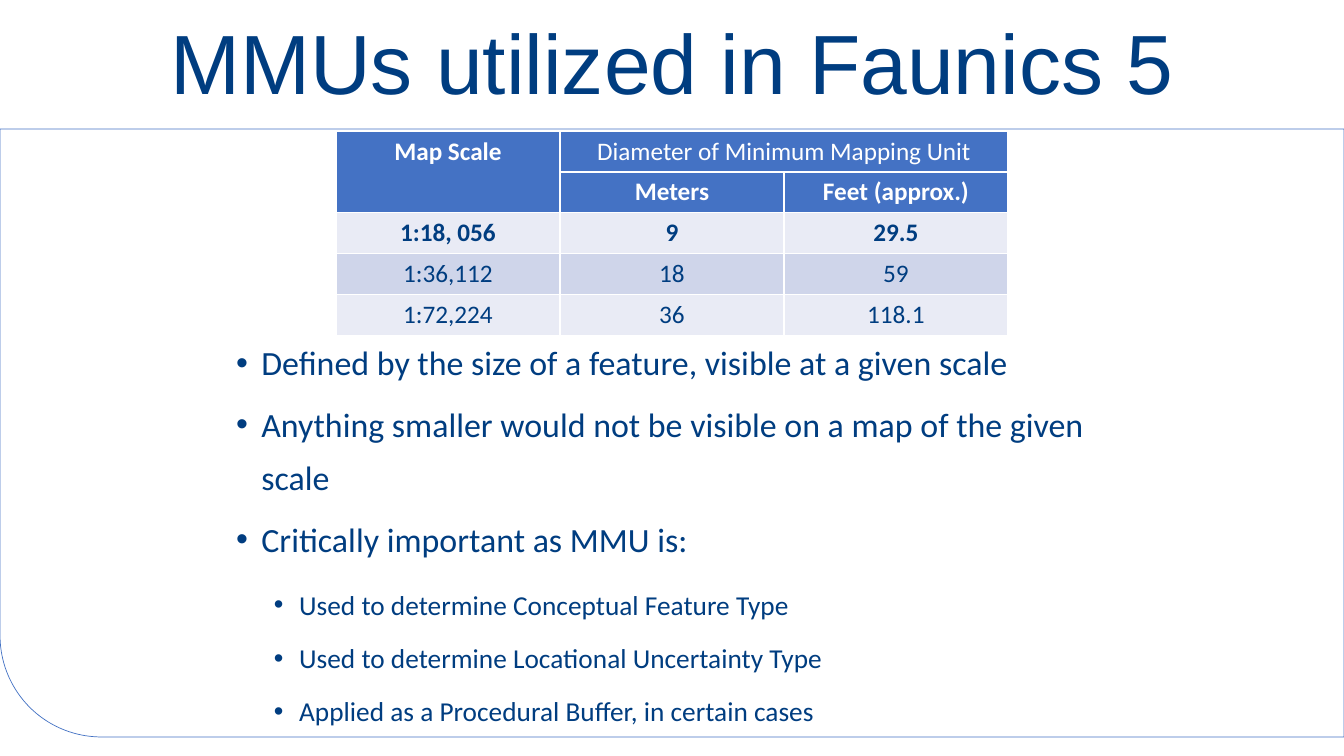
from lxml import etree
from pptx import Presentation
from pptx.dml.color import RGBColor
from pptx.enum.shapes import MSO_SHAPE
from pptx.enum.text import MSO_ANCHOR, MSO_AUTO_SIZE, PP_ALIGN
from pptx.oxml.ns import qn
from pptx.util import Pt

COLORS = {
    "navy": "003D80",
    "blue": "4472C4",
    "white": "FFFFFF",
    "pale": "E9EBF5",
    "band": "CFD5EA",
}
SCALE_ROWS = [
    ["Map Scale", "Diameter of Minimum Mapping Unit", ""],
    ["", "Meters", "Feet (approx.)"],
    ["1:18, 056", "9", "29.5"],
    ["1:36,112", "18", "59"],
    ["1:72,224", "36", "118.1"],
]
ROW_FILLS = ["blue", "blue", "pale", "band", "pale"]
BULLETS = [
    (0, "Defined by the size of a feature, visible at a given scale"),
    (0, "Anything smaller would not be visible on a map of the given scale"),
    (0, "Critically important as MMU is:"),
    (1, "Used to determine Conceptual Feature Type"),
    (1, "Used to determine Locational Uncertainty Type"),
    (1, "Applied as a Procedural Buffer, in certain cases"),
]
BULLET_LEVELS = [
    {"size": 24.2, "indent": 27, "after": 6},
    {"size": 19.5, "indent": 54, "after": 0},
]


def rgb(name):
    return RGBColor.from_string(COLORS[name])


def set_all(target, values):
    for name, value in values.items():
        setattr(target, name, value)


def format_font(font, color, **values):
    set_all(font, values)
    font.color.rgb = rgb(color)


def add_title(page, text):
    title = page.shapes.title
    set_all(title, {"left": 0, "top": Pt(12.2), "width": Pt(960), "height": Pt(72)})
    frame = title.text_frame
    set_all(frame, {"word_wrap": True, "auto_size": MSO_AUTO_SIZE.NONE,
                    "vertical_anchor": MSO_ANCHOR.MIDDLE})
    para = frame.paragraphs[0]
    set_all(para, {"text": text, "alignment": PP_ALIGN.CENTER, "line_spacing": 0.9})
    format_font(para.runs[0].font, "navy", name="Arial", size=Pt(60), bold=False)


def add_content_frame(page):
    panel = page.shapes.add_shape(
        MSO_SHAPE.ROUND_1_RECTANGLE, 0, Pt(92.2), Pt(960), Pt(434.2))
    panel.rotation = 180
    panel.shadow.inherit = False
    panel.fill.solid()
    panel.fill.fore_color.rgb = rgb("white")
    panel.line.color.rgb = rgb("blue")
    panel.line.width = Pt(0.5)


def add_cell_borders(cell, color, width):
    properties = cell._tc.get_or_add_tcPr()
    for side in ("a:lnL", "a:lnR", "a:lnT", "a:lnB"):
        line = etree.SubElement(properties, qn(side), w=str(Pt(width)))
        fill = etree.SubElement(line, qn("a:solidFill"))
        etree.SubElement(fill, qn("a:srgbClr"), val=COLORS[color])


def fill_cell(cell, text, fill, color, bold):
    add_cell_borders(cell, "white", 1)
    cell.fill.solid()
    cell.fill.fore_color.rgb = rgb(fill)
    para = cell.text_frame.paragraphs[0]
    para.alignment = PP_ALIGN.CENTER
    format_font(para.font, color, name="Calibri", size=Pt(18), bold=bold)
    if text:
        span = para.add_run()
        span.text = text
        format_font(span.font, color, name="Calibri", size=Pt(18), bold=bold)


def add_scale_table(page):
    table = page.shapes.add_table(
        len(SCALE_ROWS), 3, Pt(240), Pt(93.6), Pt(480), Pt(146)).table
    for column in table.columns:
        column.width = Pt(160)
    for r, (row, fill) in enumerate(zip(SCALE_ROWS, ROW_FILLS)):
        table.rows[r].height = Pt(29.2)
        for c, text in enumerate(row):
            bold = r in (1, 2) or (r, c) == (0, 0)
            color = "white" if fill == "blue" else "navy"
            fill_cell(table.cell(r, c), text, fill, color, bold)
    table.cell(0, 0).merge(table.cell(1, 0))
    table.cell(0, 1).merge(table.cell(0, 2))


def add_bullet(para, indent):
    properties = para._p.get_or_add_pPr()
    properties.set("marL", str(Pt(indent)))
    properties.set("indent", str(Pt(-18)))
    etree.SubElement(properties, qn("a:buFont"), typeface="Arial")
    etree.SubElement(properties, qn("a:buChar"), char="•")


def add_bullet_list(page):
    box = page.shapes.add_textbox(Pt(152.6), Pt(231.8), Pt(653.8), Pt(293.8))
    frame = box.text_frame
    frame.word_wrap = True
    for i, (level, text) in enumerate(BULLETS):
        look = BULLET_LEVELS[level]
        para = frame.add_paragraph() if i else frame.paragraphs[0]
        add_bullet(para, look["indent"])
        set_all(para, {"level": level, "line_spacing": Pt(38),
                       "space_after": Pt(look["after"])})
        span = para.add_run()
        span.text = text
        format_font(span.font, "navy", name="Calibri", size=Pt(look["size"]))


def main():
    deck = Presentation()
    set_all(deck, {"slide_width": Pt(960), "slide_height": Pt(540)})
    page = deck.slides.add_slide(deck.slide_layouts[5])
    add_content_frame(page)
    add_title(page, "MMUs utilized in Faunics 5")
    add_scale_table(page)
    add_bullet_list(page)
    deck.save("out.pptx")


if __name__ == "__main__":
    main()
